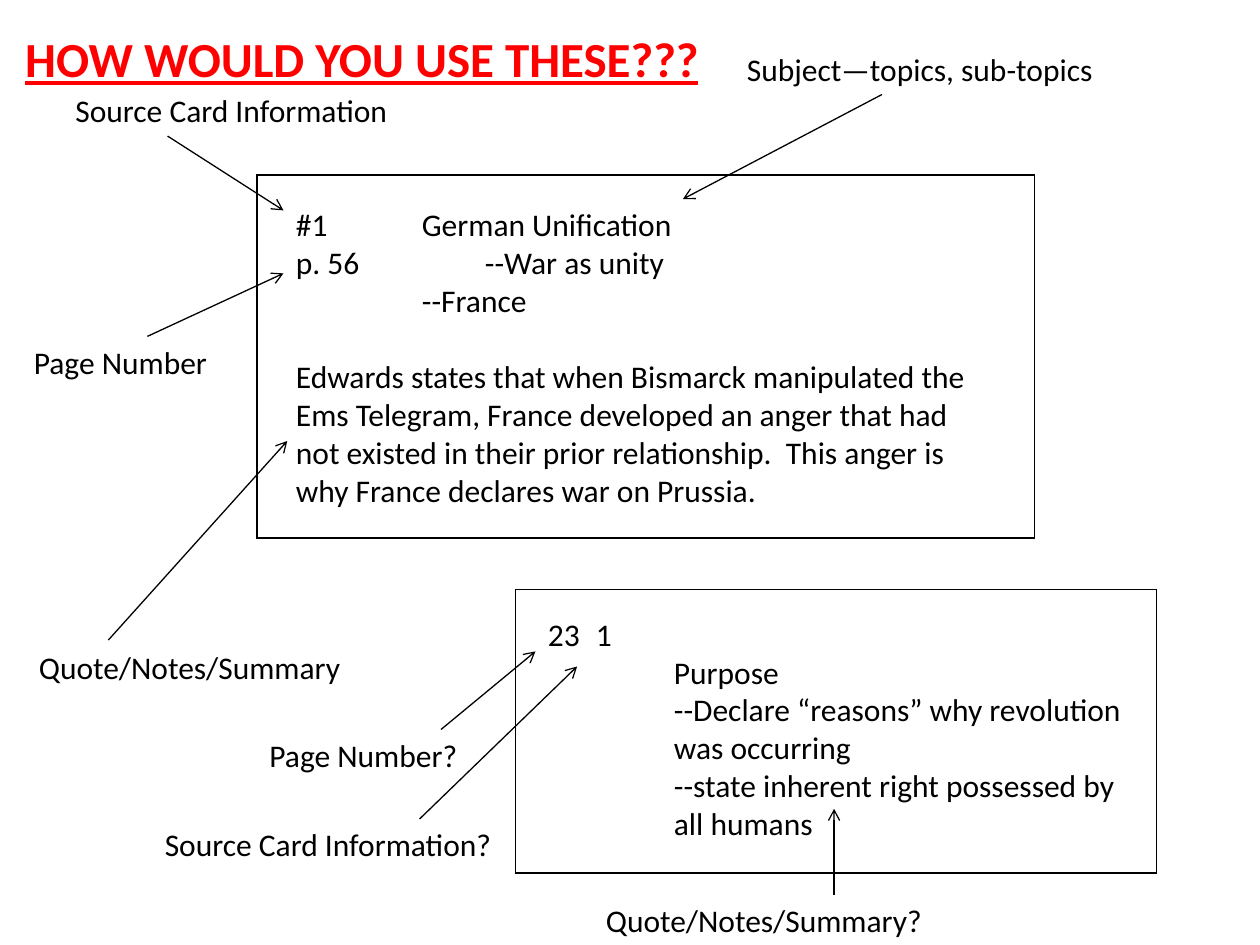
from dataclasses import dataclass

from lxml import etree
from pptx import Presentation
from pptx import util as u
from pptx.dml.color import RGBColor
from pptx.enum import shapes, text
from pptx.oxml.ns import qn


@dataclass(frozen=True)
class Theme:
    font: str = "Calibri"
    ink: RGBColor = RGBColor(0x00, 0x00, 0x00)
    accent: RGBColor = RGBColor(0xFF, 0x00, 0x00)
    title_size: int = 28
    body_size: int = 18
    line_width: float = 0.75
    border_width: float = 1


class SlideBuilder:
    def __init__(self, slide, theme):
        self.slide = slide
        self.theme = theme

    def fill_text(self, frame, lines, size, color, bold=None, underline=None):
        """Fill a text frame, one paragraph for each line."""
        frame.word_wrap = True
        for index, line in enumerate(lines):
            paragraph = frame.paragraphs[0] if index == 0 else frame.add_paragraph()
            run = paragraph.add_run()
            run.text = line
            font = run.font
            font.name, font.size = self.theme.font, u.Pt(size)
            font.color.rgb = color
            font.bold, font.underline = bold, underline
        return frame.paragraphs

    def title(self, line, left, top, width, height):
        shape = self.slide.shapes.title
        shape.left, shape.top = u.Inches(left), u.Inches(top)
        shape.width, shape.height = u.Inches(width), u.Inches(height)
        frame = shape.text_frame
        frame.vertical_anchor = text.MSO_ANCHOR.TOP
        frame.auto_size = text.MSO_AUTO_SIZE.NONE
        paragraphs = self.fill_text(frame, [line], self.theme.title_size,
                                    self.theme.accent, bold=True, underline=True)
        paragraphs[0].alignment = text.PP_ALIGN.LEFT

    def text_box(self, lines, left, top, width, height=0.4):
        box = self.slide.shapes.add_textbox(
            u.Inches(left), u.Inches(top), u.Inches(width), u.Inches(height))
        return self.fill_text(box.text_frame, lines, self.theme.body_size, self.theme.ink)

    def card(self, left, top, width, height):
        """Draw a note card as a one-cell table with a plain border."""
        table = self.slide.shapes.add_table(
            1, 1, u.Inches(left), u.Inches(top), u.Inches(width), u.Inches(height)).table
        table.first_row = table.horz_banding = False
        cell = table.cell(0, 0)
        cell.fill.background()
        properties = cell._tc.get_or_add_tcPr()
        for index, side in enumerate(("lnL", "lnR", "lnT", "lnB")):
            border = etree.Element(qn(f"a:{side}"), w=str(u.Pt(self.theme.border_width)))
            fill = etree.SubElement(border, qn("a:solidFill"))
            etree.SubElement(fill, qn("a:srgbClr"), val=str(self.theme.ink))
            properties.insert(index, border)

    def arrow(self, start, end):
        connector = self.slide.shapes.add_connector(
            shapes.MSO_CONNECTOR.STRAIGHT, *map(u.Inches, (*start, *end)))
        connector.line.color.rgb = self.theme.ink
        connector.line.width = u.Pt(self.theme.line_width)
        etree.SubElement(connector.line._get_or_add_ln(), qn("a:tailEnd"), type="arrow")
        etree.SubElement(connector._element.spPr, qn("a:effectLst"))

    def indent(self, paragraph, left, first=0.0):
        properties = paragraph._p.get_or_add_pPr()
        properties.set("marL", str(u.Inches(left)))
        properties.set("indent", str(u.Inches(first)))
        return properties

    def number(self, paragraph, start, hang):
        properties = self.indent(paragraph, hang, -hang)
        etree.SubElement(properties, qn("a:buFont"), typeface="+mj-lt")
        etree.SubElement(properties, qn("a:buAutoNum"),
                         type="arabicPlain", startAt=str(start))


def main():
    presentation = Presentation()
    presentation.slide_width, presentation.slide_height = u.Inches(10), u.Inches(7.5)
    slide = presentation.slides.add_slide(presentation.slide_layouts[5])
    builder = SlideBuilder(slide, Theme())

    builder.title("HOW WOULD YOU USE THESE???", 0.1, 0.18, 5.71, 0.57)

    # First note card
    builder.card(2.04, 1.39, 6.17, 2.88)
    notes = builder.text_box([
        "#1\t\tGerman Unification",
        "p. 56\t\t--War as unity",
        "\t\t--France",
        "Edwards states that when Bismarck manipulated the Ems Telegram, France "
        "developed an anger that had not existed in their prior relationship.  "
        "This anger is why France declares war on Prussia.",
    ], 2.25, 1.58, 5.75, 2.52)
    notes[-1].space_before = u.Pt(22)

    # Second note card
    builder.card(4.09, 4.68, 5.09, 2.25)
    source, *points = builder.text_box([
        "1",
        "Purpose",
        "--Declare “reasons” why revolution was occurring",
        "--state inherent right possessed by all humans",
    ], 4.25, 4.83, 4.75, 1.92)
    builder.number(source, start=23, hang=0.38)
    for point in points:
        point.level = 1
        builder.indent(point, 1)

    # Labels, each with the arrow to the part it names
    labels = [
        ("Source Card Information", (0.5, 0.67, 3.5), (1.33, 1.08), (2.25, 1.67)),
        ("Page Number", (0.17, 2.67, 1.83), (1.17, 2.67), (2.25, 2.17)),
        ("Subject—topics, sub-topics", (5.83, 0.35, 3.29), (7, 0.75), (5.42, 1.58)),
        ("Quote/Notes/Summary", (0.21, 5.09, 3.29), (0.86, 5.08), (2.28, 3.5)),
        ("Page Number?", (2.04, 5.79, 1.83), (3.5, 5.79), (4.25, 5.17)),
        ("Source Card Information?", (1.21, 6.5, 3.5), (3.33, 6.5), (4.58, 5.29)),
        ("Quote/Notes/Summary?", (4.71, 7.1, 3.29), (6.62, 7.1), (6.62, 6.42)),
    ]
    for label, place, start, end in labels:
        builder.text_box([label], *place)
        builder.arrow(start, end)

    presentation.save("out.pptx")


if __name__ == "__main__":
    main()
